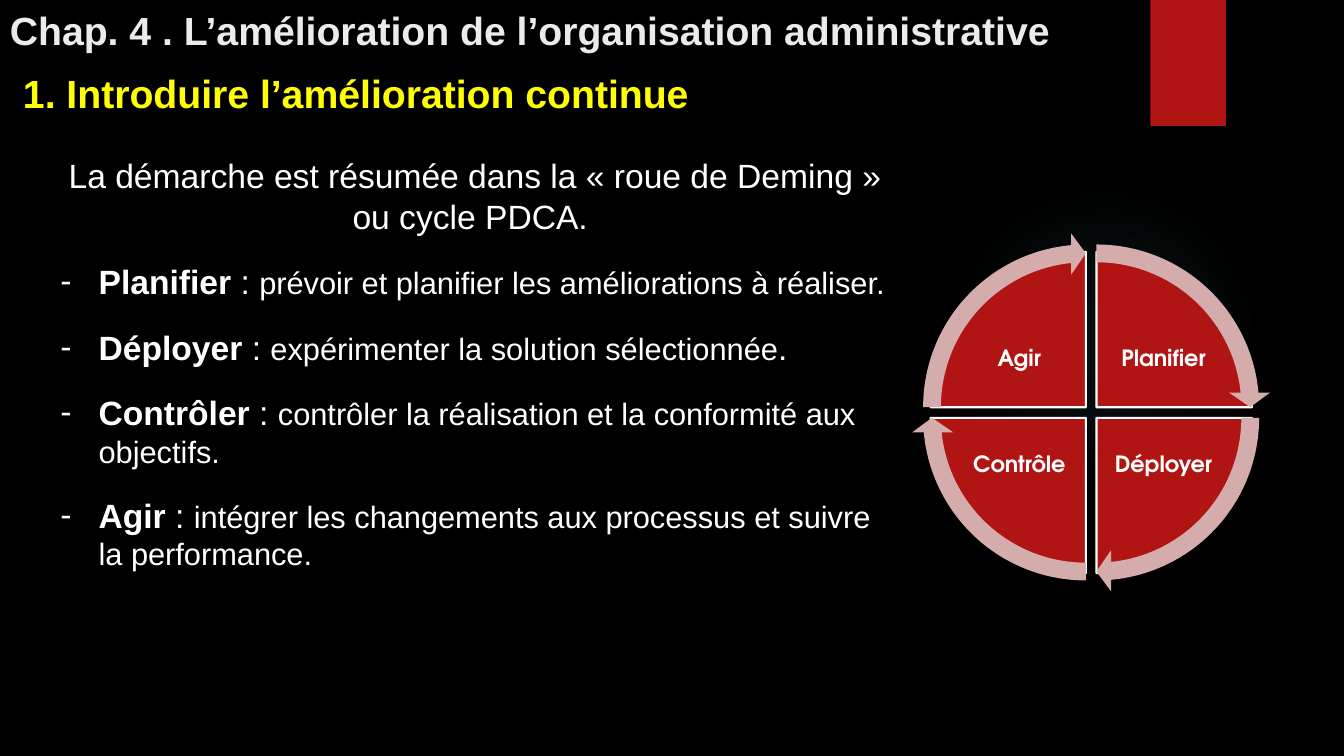
from lxml import etree
from pptx import Presentation
from pptx.dml.color import RGBColor
from pptx.enum.shapes import MSO_SHAPE
from pptx.enum.text import MSO_ANCHOR, PP_ALIGN
from pptx.oxml import parse_xml
from pptx.oxml.ns import nsdecls, qn
from pptx.util import Inches, Pt

RECT, OVAL = MSO_SHAPE.RECTANGLE, MSO_SHAPE.OVAL
PIE, ARROW = MSO_SHAPE.CHORD, MSO_SHAPE.CIRCULAR_ARROW
PIE = MSO_SHAPE.PIE
MIDDLE, BOTTOM, TOP = MSO_ANCHOR.MIDDLE, MSO_ANCHOR.BOTTOM, MSO_ANCHOR.TOP
CENTER, LEFT = PP_ALIGN.CENTER, PP_ALIGN.LEFT

# Content
CHAPTER = "Chap. 4 . L’amélioration de l’organisation administrative"
SECTION = "1. Introduire l’amélioration continue"
INTRO = "La démarche est résumée dans la « roue de Deming » ou cycle PDCA. "
STEPS = [  # term, explanation, closing mark in the larger size
    ("Planifier", "prévoir et planifier les améliorations à réaliser.", ""),
    ("Déployer", "expérimenter la solution sélectionnée", "."),
    ("Contrôler", "contrôler la réalisation et la conformité aux objectifs.", ""),
    ("Agir", "intégrer les changements aux processus et suivre la performance.", ""),
]
# Clockwise from the top right: label, column (0 left), row (0 top)
QUADRANTS = [("Planifier", 1, 0), ("Déployer", 1, 1), ("Contrôle", 0, 1), ("Agir", 0, 0)]

THEME = {
    "font": "Arial", "wheel_font": "TeX Gyre Adventor",
    "back": "000000", "red": "B01513", "pink": "D4ACAB", "glow": "50B9C1",
    "title": "EBEBEB", "section": "FFFF00", "text": "FFFFFF",
    "heading_size": 28, "body_size": 24, "detail_size": 22, "label_size": 16,
}

# Wheel geometry: angles in units of 100000/60000 degree, a full turn is 216
TURN, QUARTER, TOP_ANGLE = 216, 54, 162
ARROW_SWEEP, ARROW_BAND, ARROW_TIP, ARROW_HEAD = 50.725, 0.051, 3.275, 0.059
WHEEL_X, WHEEL_Y, WHEEL_D, GAP = 9.23, 2.5, 3.08, 0.105
ARROW_D, ARROW_RISE = 3.46, 0.19
LABEL_X, LABEL_Y, LABEL_W, LABEL_H = 9.54, 3.14, 1.14, 0.84
LABEL_DX, LABEL_DY = 1.43, 1.06


def color(name):
    return RGBColor.from_string(THEME[name])


def add_shape(slide, kind, x, y, w, h, fill, line=None, adjustments=()):
    s = slide.shapes.add_shape(kind, Inches(x), Inches(y), Inches(w), Inches(h))
    s.shadow.inherit = False
    s.fill.solid()
    s.fill.fore_color.rgb = color(fill)
    if line:
        s.line.color.rgb = color(line)
        s.line.width = Pt(1.5)
    else:
        s.line.fill.background()
    for i, value in enumerate(adjustments):
        s.adjustments[i] = value
    return s


def add_box(slide, x, y, w, h, anchor, inset=None):
    tf = slide.shapes.add_textbox(Inches(x), Inches(y), Inches(w), Inches(h)).text_frame
    tf.word_wrap = True
    tf.vertical_anchor = anchor
    if inset is not None:
        tf.margin_left = tf.margin_right = tf.margin_top = tf.margin_bottom = Inches(inset)
    return tf


def add_run(p, text, size, fill="text", bold=False, font="font"):
    r = p.add_run()
    r.text = text
    r.font.name = THEME[font]
    r.font.size = Pt(THEME[size])
    r.font.bold = bold
    r.font.color.rgb = color(fill)


def add_dash(p):
    pPr = p._p.get_or_add_pPr()
    pPr.set("marL", str(Inches(0.38)))
    pPr.set("indent", str(-Inches(0.38)))
    etree.SubElement(pPr, qn("a:buFont")).set("typeface", THEME["font"])
    etree.SubElement(pPr, qn("a:buChar")).set("char", "-")


def add_backdrop(slide):
    slide.background.fill.solid()
    slide.background.fill.fore_color.rgb = color("back")

    # Faint radial glow behind the wheel
    glow = add_shape(slide, OVAL, 9.41, 1.83, 3.08, 3.08, "glow")
    stops = "".join(
        f'<a:gs pos="{pos * 1000}"><a:srgbClr val="{THEME["glow"]}">'
        f'<a:alpha val="{alpha * 1000}"/></a:srgbClr></a:gs>'
        for pos, alpha in [(0, 7), (36, 6), (69, 0)])
    solid = glow._element.spPr.find(qn("a:solidFill"))
    solid.getparent().replace(solid, parse_xml(
        f'<a:gradFill {nsdecls("a")}><a:gsLst>{stops}</a:gsLst><a:path path="circle">'
        '<a:fillToRect l="50000" t="50000" r="50000" b="50000"/></a:path></a:gradFill>'))

    # Red tab with a soft shadow
    tab = add_shape(slide, RECT, 11.41, 0, 0.75, 1.25, "red")
    tab._element.spPr.find(qn("a:effectLst")).append(parse_xml(
        f'<a:outerShdw {nsdecls("a")} blurRad="{Pt(3)}" dist="{Pt(2)}" dir="5400000">'
        f'<a:srgbClr val="{THEME["back"]}"><a:alpha val="45000"/></a:srgbClr></a:outerShdw>'))


def add_texts(slide):
    # Headings
    p = add_box(slide, 0, 0.03, 12.76, 0.55, BOTTOM).paragraphs[0]
    p.line_spacing = 1.5
    add_run(p, CHAPTER, "heading_size", "title", True)
    p = add_box(slide, 0.13, 0.64, 8.7, 0.57, MIDDLE).paragraphs[0]
    add_run(p, SECTION, "heading_size", "section", True)

    # Introduction and the four steps
    tf = add_box(slide, 0.5, 1.49, 8.42, 4.27, TOP)
    p = tf.paragraphs[0]
    p.alignment = CENTER
    add_run(p, INTRO, "body_size")
    for term, detail, mark in STEPS:
        p = tf.add_paragraph()
        p.alignment = LEFT
        p.space_before = Pt(18)
        add_dash(p)
        add_run(p, term, "body_size", bold=True)
        add_run(p, " : ", "body_size")
        add_run(p, detail, "detail_size")
        if mark:
            add_run(p, mark, "body_size")


def add_wheel(slide):
    # Quarters with their labels
    for i, (label, col, row) in enumerate(QUADRANTS):
        start = (TOP_ANGLE + i * QUARTER) % TURN
        add_shape(slide, PIE, WHEEL_X + col * GAP, WHEEL_Y + row * GAP, WHEEL_D, WHEEL_D,
                  "red", "text", (start, (start + QUARTER) % TURN))
        tf = add_box(slide, LABEL_X + col * LABEL_DX, LABEL_Y + row * LABEL_DY,
                     LABEL_W, LABEL_H, MIDDLE, 0.02)
        p = tf.paragraphs[0]
        p.alignment = CENTER
        p.line_spacing = 0.9
        add_run(p, label, "label_size", bold=True, font="wheel_font")

    # Arrows around the rim
    for i, (_, col, row) in enumerate(QUADRANTS):
        start = (TOP_ANGLE + i * QUARTER) % TURN
        add_shape(slide, ARROW, WHEEL_X - ARROW_RISE + col * GAP,
                  WHEEL_Y - ARROW_RISE + row * GAP, ARROW_D, ARROW_D, "pink",
                  adjustments=(ARROW_BAND, ARROW_TIP, (start + ARROW_SWEEP) % TURN,
                               start, ARROW_HEAD))


def main():
    prs = Presentation()
    prs.slide_width, prs.slide_height = Inches(13.33), Inches(7.5)
    slide = prs.slides.add_slide(prs.slide_layouts[6])
    add_backdrop(slide)
    add_texts(slide)
    add_wheel(slide)
    prs.save("out.pptx")


if __name__ == "__main__":
    main()
